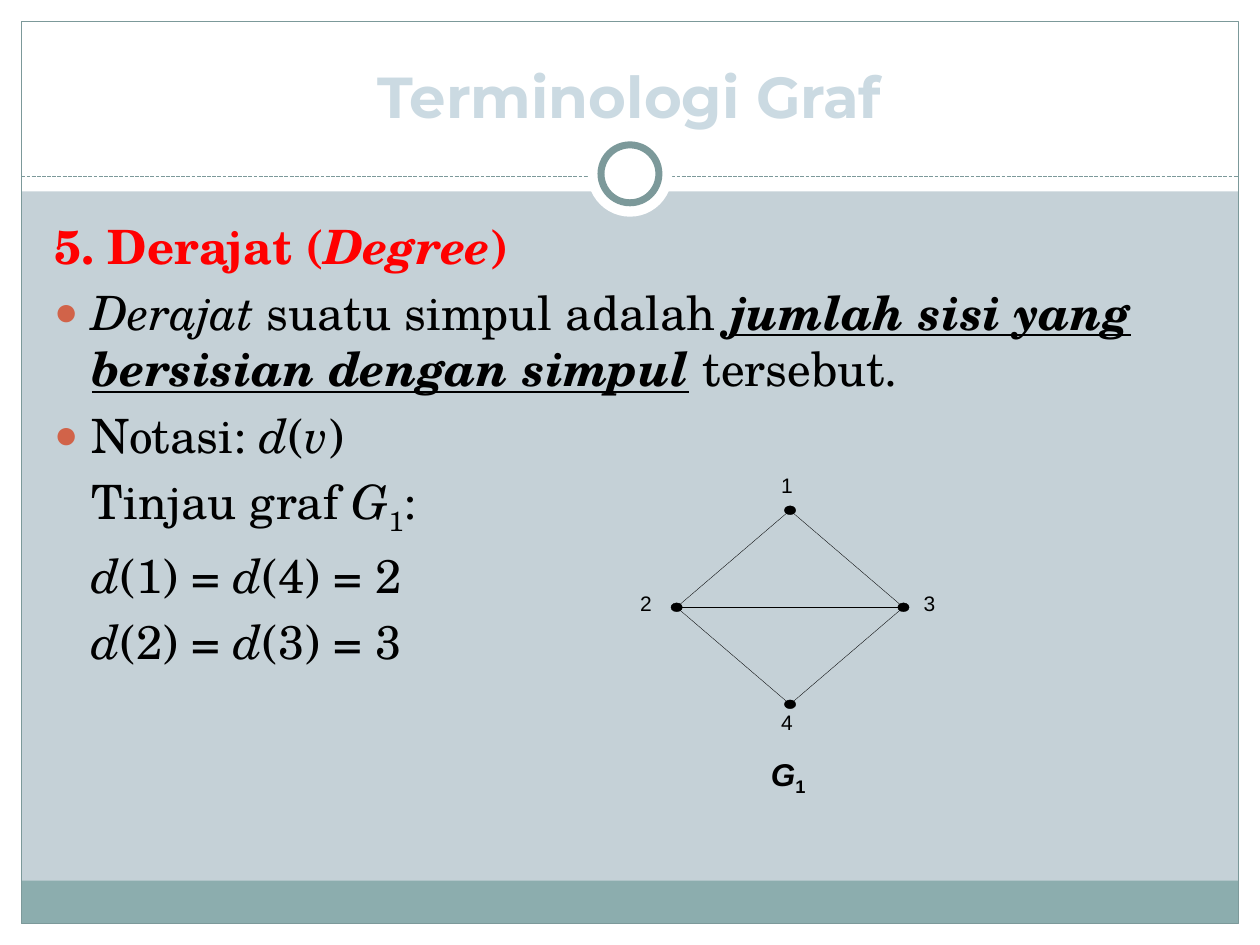
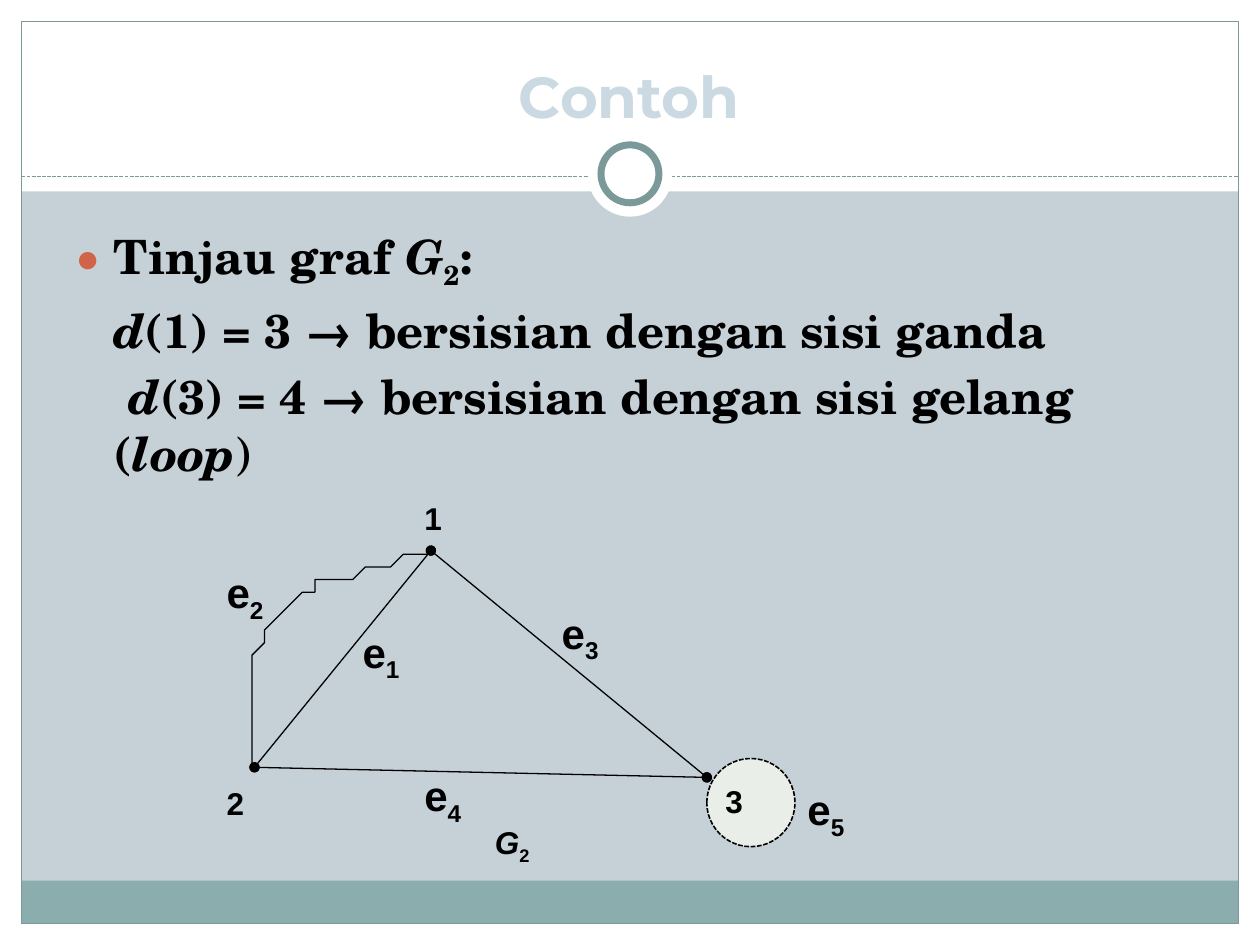
"""Build two slides on the degree of graph nodes."""
from lxml.etree import SubElement
from pptx import Presentation
from pptx.dml.color import RGBColor
from pptx.enum.dml import MSO_LINE
from pptx.enum.shapes import MSO_CONNECTOR, MSO_SHAPE
from pptx.enum.text import MSO_ANCHOR, MSO_AUTO_SIZE
from pptx.oxml.ns import qn
from pptx.util import Inches, Pt

hue = RGBColor.from_string
BLACK, WHITE, TEAL, RED = "000000", "FFFFFF", "7C999A", "FF0000"
RECT, OVAL = MSO_SHAPE.RECTANGLE, MSO_SHAPE.OVAL
DASH = MSO_LINE.SQUARE_DOT

deck = Presentation()
deck.slide_width, deck.slide_height = Inches(10), Inches(7.5)
cell = deck.slide_width // 100
COLS, ROWS = 100, 75


def draw(page, kind, box, fill=None, edge=None, width=0.75, dash=None):
    """Add a shape, a line ("line") or a text box ("text") in grid cells."""
    spot = [round(n * cell) for n in box]
    if kind == "text":
        return page.shapes.add_textbox(*spot)
    if kind == "line":
        item = page.shapes.add_connector(MSO_CONNECTOR.STRAIGHT, *spot)
    else:
        item = page.shapes.add_shape(kind, *spot)
        item.shadow.inherit = False
        if fill:
            item.fill.solid()
            item.fill.fore_color.rgb = hue(fill)
        else:
            item.fill.background()
    if edge:
        item.line.color.rgb = hue(edge)
        item.line.width = Pt(width)
        if dash:
            item.line.dash_style = dash
    else:
        item.line.fill.background()
    if kind == "line":
        SubElement(item.element.spPr, qn("a:effectLst"))
    return item


def write(para, runs, size, face, tint=BLACK):
    """Add runs of (text, marks): b bold, i italic, u underline, s subscript."""
    for text, marks in runs:
        run = para.add_run()
        run.text = text
        font = run.font
        font.size, font.name, font.color.rgb = Pt(size), face, hue(tint)
        font.bold, font.italic = "b" in marks, "i" in marks
        font.underline = "u" in marks
        if "s" in marks:
            run._r.get_or_add_rPr().set("baseline", "-25000")


base = deck.slide_layouts[1]
for spot in list(base.placeholders)[2:]:
    spot.element.getparent().remove(spot.element)
base.background.fill.solid()
base.background.fill.fore_color.rgb = hue("C5D1D7")
pages = [deck.slides.add_slide(base) for _ in range(2)]
first, second = pages

rim = 1.7
wide, tall = COLS - 2 * rim, ROWS - 2 * rim
frame = [
    (RECT, (0, ROWS - rim, COLS, rim), WHITE),
    (RECT, (0, 0, COLS, 15.2), WHITE),
    (RECT, (0, 0, rim, ROWS), WHITE),
    (RECT, (COLS - rim, 0, rim, ROWS), WHITE),
    (RECT, (rim, 69.9, wide, 3.4), "8CADAE"),
    (RECT, (rim, rim, wide, tall), None, TEAL),
    ("line", (rim, 14, COLS - rim, 14), None, TEAL, 0.75, DASH),
    (OVAL, (46.65, 10.5, 6.7, 6.7), WHITE),
    (OVAL, (47.7, 11.5, 4.6, 4.6), WHITE, TEAL, 4),
]
for part in [draw(first, *row) for row in frame]:
    base.shapes.element.append(part.element)

# Each body line: bullet, left margin, first-line indent, colour, runs.
texts = [
    ("Terminologi Graf", (3.3, 16.7, 93, 50), [
        (False, 3, -3, RED, [("5. Derajat (", "b"), ("Degree", "bi"), (")", "b")]),
        (True, 3, -3, BLACK, [
            ("Derajat ", "i"), ("suatu simpul adalah ", ""),
            ("jumlah sisi yang bersisian dengan simpul", "biu"),
            (" ", "b"), ("tersebut.", "")]),
        (True, 3, -3, BLACK, [
            ("Notasi: ", ""), ("d", "i"), ("(", ""), ("v", "i"), (")", "")]),
        (False, 3, 0, BLACK, [
            ("Tinjau graf ", ""), ("G", "i"), ("1", "s"), (":", "")]),
        (False, 3, 0, BLACK, [
            ("d", "i"), ("(1) = ", ""), ("d", "i"), ("(4) = 2", "")]),
        (False, 3, 0, BLACK, [
            ("d", "i"), ("(2) = ", ""), ("d", "i"), ("(3) = 3", "")]),
    ]),
    ("Contoh", (5, 17.5, 90, 26.2), [
        (True, 3, -3, BLACK, [
            ("Tinjau graf ", "b"), ("G", "bi"), ("2", "bs"), (":", "b")]),
        (False, 3, 0, BLACK, [
            ("d", "bi"), ("(1) = 3 → bersisian dengan sisi ganda", "b")]),
        (False, 3, 1.2, BLACK, [
            ("d", "bi"), ("(3) = 4 → bersisian dengan sisi gelang (", "b"),
            ("loop", "bi"), (")", "")]),
    ]),
]
for page, (head, area, lines) in zip(pages, texts):
    title, body = page.placeholders
    for spot, box in ((title, (3.3, 2.5, 93.3, 8.3)), (body, area)):
        spot.left, spot.top, spot.width, spot.height = [round(n * cell) for n in box]
        spot.text_frame.auto_size = MSO_AUTO_SIZE.NONE
    title.text_frame.vertical_anchor = MSO_ANCHOR.BOTTOM
    para = title.text_frame.paragraphs[0]
    write(para, [(head, "b")], 33, "Montserrat", "CBDAE2")
    props = para.runs[0]._r.get_or_add_rPr()
    rule = SubElement(props, qn("a:ln"), w=str(Pt(1)))
    SubElement(SubElement(rule, qn("a:solidFill")), qn("a:srgbClr"), val="5B668F")
    props.insert(0, rule)
    for i, (dot, left, dent, tint, runs) in enumerate(lines):
        frame = body.text_frame
        para = frame.add_paragraph() if i else frame.paragraphs[0]
        props = para._p.get_or_add_pPr()
        props.set("marL", str(round(left * cell)))
        props.set("indent", str(round(dent * cell)))
        if dot:
            SubElement(SubElement(props, qn("a:buClr")), qn("a:srgbClr"), val="D16349")
            SubElement(props, qn("a:buSzPct"), val="85000")
            SubElement(props, qn("a:buChar"), char="●")
        else:
            SubElement(props, qn("a:buNone"))
        write(para, runs, 27, "TeX Gyre Schola", tint)

midx, midy, dx, dy = 62.7, 48.2, 9, 7.7
nodes = {1: (midx, midy - dy), 2: (midx - dx, midy),
         3: (midx + dx, midy), 4: (midx, midy + dy)}
for x, y in nodes.values():
    draw(first, OVAL, (x - 0.45, y - 0.35, 0.9, 0.7), BLACK, BLACK, 0.2)
for a, b in ((1, 2), (2, 4), (1, 3), (3, 4), (2, 3)):
    draw(first, "line", nodes[a] + nodes[b], None, BLACK, 0.2)

draw(second, OVAL, (56.1, 60.2, 7, 7), "E9EFE8", BLACK, 0.9, DASH)
spots = {1: (34.2, 43.7), 2: (20.2, 60.9), 3: (56.1, 61.7)}
for a, b in ((2, 1), (1, 3), (2, 3)):
    edge = draw(second, "line", spots[a] + spots[b], None, BLACK)
    rule = edge.element.spPr.find(qn("a:ln"))
    for end in ("a:headEnd", "a:tailEnd"):
        SubElement(rule, qn(end), type="oval")

bends = [((20.1, 61), (19.8, 56.4), (19.5, 51.9), (21.8, 49.1)),
         ((21.8, 49.1), (24.1, 46.2), (29, 45.1), (33.9, 43.9))]
steps = 16
arc = []
for bend in bends:
    for n in range(1, steps + 1):
        t = n / steps
        parts = ((1 - t) ** 3, 3 * t * (1 - t) ** 2, 3 * t * t * (1 - t), t ** 3)
        arc.append([sum(k * p[axis] for k, p in zip(parts, bend)) for axis in (0, 1)])
pen = second.shapes.build_freeform(*bends[0][0], scale=cell)
pen.add_line_segments(arc, close=False)
curve = pen.convert_to_shape()
curve.shadow.inherit = False
curve.fill.background()
curve.line.color.rgb = hue(BLACK)
curve.line.width = Pt(0.75)

tags = []
for name, x, y in (("1", 62, 37.5), ("2", 50.8, 46.9), ("3", 73.3, 46.9), ("4", 62, 56.3)):
    tags.append((first, (x, y, 2.5, 3.1), 12, [(name, "")]))
for name, x, y in (("1", 32.7, 39.1), ("2", 17, 61.7), ("3", 56.6, 61.6)):
    tags.append((second, (x, y, 3.4, 4), 18, [(name, "b")]))
for name, x, y in (("1", 27.8, 49.2), ("2", 17, 44.5), ("3", 43.6, 47.7),
                   ("4", 32.7, 60.6), ("5", 63.1, 61.7)):
    tags.append((second, (x, y, 5.6, 5), 24, [("e", "b"), (name, "bs")]))
for page, name, x, y in ((first, "1", 60.2, 59.4), (second, "2", 38.3, 64.8)):
    tags.append((page, (x, y, 4.9, 4), 18, [("G", "bi"), (name, "bs")]))
for page, box, size, runs in tags:
    text = draw(page, "text", box).text_frame
    text.word_wrap = size != 18
    if size == 12:
        text.margin_left = text.margin_right = 0
        text.margin_top = text.margin_bottom = 0
    write(text.paragraphs[0], runs, size, "Arial")

deck.save("out.pptx")
